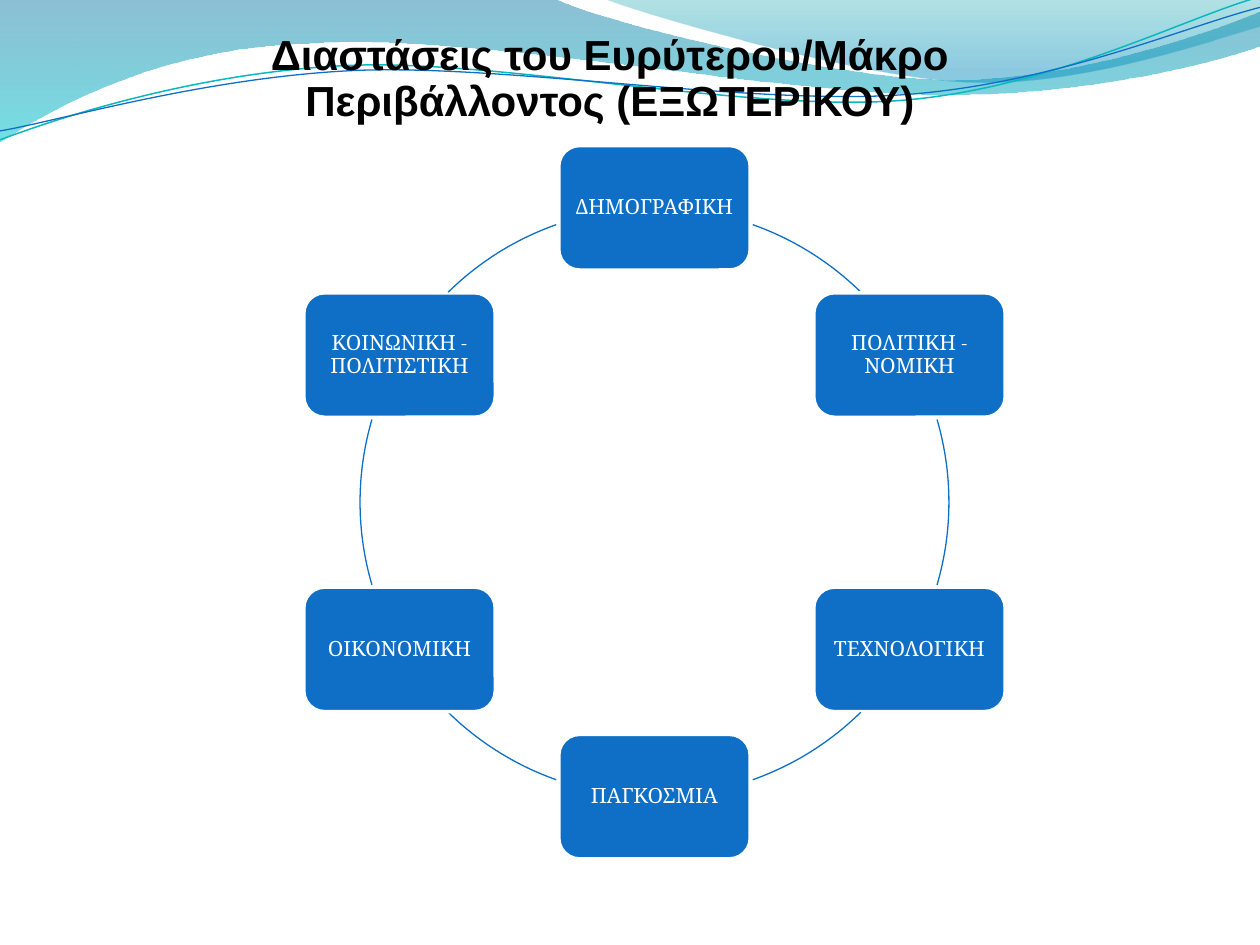
from dataclasses import dataclass
from math import cos, radians, sin

from lxml.etree import SubElement
from pptx import Presentation
from pptx.dml.color import RGBColor
from pptx.enum.shapes import MSO_SHAPE
from pptx.enum.text import MSO_ANCHOR, MSO_AUTO_SIZE, PP_ALIGN
from pptx.oxml.ns import qn
from pptx.util import Cm, Pt

BLUE = RGBColor(0x0F, 0x6F, 0xC6)
TEAL = RGBColor(0x0A, 0xB8, 0xBF)
DEEP_BLUE = RGBColor(0x00, 0x74, 0xA1)
CYAN = RGBColor(0x00, 0xC6, 0xCF)
SEA_GREEN = RGBColor(0x00, 0xA1, 0xA9)
SKY_BLUE = RGBColor(0x00, 0x8B, 0xBF)
BLACK = RGBColor(0x00, 0x00, 0x00)
WHITE = RGBColor(0xFF, 0xFF, 0xFF)

TITLE = "Διαστάσεις του Ευρύτερου/Μάκρο Περιβάλλοντος (ΕΞΩΤΕΡΙΚΟΥ)"
DIMENSIONS = [
    "ΔΗΜΟΓΡΑΦΙΚΗ",
    "ΠΟΛΙΤΙΚΗ - ΝΟΜΙΚΗ",
    "ΤΕΧΝΟΛΟΓΙΚΗ",
    "ΠΑΓΚΟΣΜΙΑ",
    "ΟΙΚΟΝΟΜΙΚΗ",
    "ΚΟΙΝΩΝΙΚΗ - ΠΟΛΙΤΙΣΤΙΚΗ",
]
NODE_WIDTH, NODE_HEIGHT = 3.86, 2.51
ARCS = [(-58, 12.5), (0, 16.3), (58, 12.5), (122, 12.5), (180, 16.3), (238, 12.5)]

BROAD_WAVE = [
    [(0, 0)],
    [(11.18, -0.03)],
    [(12.09, 0.43), (16.87, 1.6), (19.25, 1.6)],
    [(21.67, 1.6), (24.33, 0.66), (25.4, 0.23)],
    [(25.43, 0.91)],
    [(24.97, 1.12), (22.1, 1.93), (18.95, 1.91)],
    [(15.8, 1.91), (9.7, 0.71), (6.53, 0.86)],
    [(3.28, 0.91), (1.17, 2.11), (-0.03, 2.87)],
]
RIGHT_WAVE = [
    [(12.17, -0.03)],
    [(12.93, 0.28), (17.32, 1.57), (19.53, 1.65)],
    [(21.74, 1.75), (24.41, 0.81), (25.4, 0.53)],
    [(25.4, 0)],
]
TEAL_CURVE = [
    [(0, 2.82)],
    [(1.22, 2.36), (4.01, 1.45), (7.04, 1.32)],
    [(10.03, 1.19), (15.06, 2.26), (18.11, 2.03)],
    [(21.16, 1.8), (23.83, 0.38), (25.35, -0.05)],
]
BLUE_CURVE = [
    [(0, 2.64)],
    [(1.19, 2.44), (4.17, 1.55), (7.19, 1.42)],
    [(10.24, 1.3), (15.16, 2.13), (18.21, 1.91)],
    [(21.23, 1.7), (23.9, 0.53), (25.4, 0.15)],
]


@dataclass
class Box:
    """A region of the slide, in centimetres."""

    left: float
    top: float
    width: float
    height: float

    def lengths(self):
        """Return the four measures as slide lengths."""
        return Cm(self.left), Cm(self.top), Cm(self.width), Cm(self.height)


def write_text(shape, text, font, size, color, bold=False, spacing=0.9,
               anchor=MSO_ANCHOR.MIDDLE):
    """Write one centred paragraph into a shape."""
    frame = shape.text_frame
    frame.word_wrap = True
    frame.auto_size = MSO_AUTO_SIZE.NONE
    frame.vertical_anchor = anchor
    para = frame.paragraphs[0]
    para.alignment = PP_ALIGN.CENTER
    para.line_spacing = spacing
    span = para.add_run()
    span.text = text
    span.font.name = font
    span.font.size = Pt(size)
    span.font.bold = bold
    span.font.color.rgb = color


def draw_outline(page, box, segments, closed):
    """Draw an outline whose three-point segments are Bézier curves."""
    points = [
        (Cm(box.left + x), Cm(box.top + y)) for segment in segments for x, y in segment
    ]
    builder = page.shapes.build_freeform(*points[0])
    builder.add_line_segments(points[1:], close=closed)
    shape = builder.convert_to_shape()
    shape.shadow.inherit = False
    lines = iter(list(shape.element.iter(qn("a:lnTo"))))
    for segment in segments[1:]:
        steps = [next(lines) for point in segment]
        if len(steps) == 3:
            curve = steps[0].makeelement(qn("a:cubicBezTo"))
            steps[0].addprevious(curve)
            for step in steps:
                curve.append(step[0])
                step.getparent().remove(step)
    return shape


def draw_wave(page, box, segments, stops):
    """Draw a translucent wave with a downward gradient."""
    wave = draw_outline(page, box, segments, closed=True)
    wave.line.fill.background()
    wave.fill.gradient()
    wave.fill.gradient_angle = 270
    for stop, (position, color, opacity) in zip(wave.fill.gradient_stops, stops):
        stop.position = position
        stop.color.rgb = color
    for element, (position, color, opacity) in zip(wave.element.iter(qn("a:gs")), stops):
        SubElement(element[0], qn("a:alpha")).set("val", str(opacity * 1000))


def draw_curve(page, box, segments, color, width):
    """Draw a thin open curve."""
    curve = draw_outline(page, box, segments, closed=False)
    curve.fill.background()
    curve.line.color.rgb = color
    curve.line.width = Pt(width)


def add_header_waves(page, box):
    """Draw the waves and curves along the top of the slide."""
    draw_wave(page, box, BROAD_WAVE, [(0, DEEP_BLUE, 45), (1, CYAN, 55)])
    draw_wave(page, box, RIGHT_WAVE, [(0, SEA_GREEN, 30), (0.8, SKY_BLUE, 45)])
    draw_curve(page, box, TEAL_CURVE, TEAL, 0.85)
    draw_curve(page, box, BLUE_CURVE, BLUE, 0.75)


def add_title(page, box):
    """Place the title placeholder in front of the waves."""
    title = page.shapes.title
    title.element.getparent().append(title.element)
    title.left, title.top, title.width, title.height = box.lengths()
    write_text(title, TITLE, "Arial", 24, BLACK, bold=True, spacing=0.93,
               anchor=MSO_ANCHOR.TOP)


def add_node(page, box, text):
    """Draw one rounded box of the cycle."""
    node = page.shapes.add_shape(MSO_SHAPE.ROUNDED_RECTANGLE, *box.lengths())
    node.shadow.inherit = False
    node.fill.solid()
    node.fill.fore_color.rgb = BLUE
    node.line.color.rgb = WHITE
    node.line.width = Pt(2)
    frame = node.text_frame
    frame.margin_left = frame.margin_right = Cm(0.05)
    frame.margin_top = frame.margin_bottom = Cm(0.05)
    write_text(node, text, "Cambria", 12, WHITE)


def add_arc(page, box, middle, half_sweep):
    """Draw the part of the ring around a middle angle in degrees."""
    arc = page.shapes.add_shape(MSO_SHAPE.ARC, *box.lengths())
    arc.shadow.inherit = False
    arc.fill.background()
    arc.line.color.rgb = BLUE
    arc.line.width = Pt(0.75)
    for index, angle in enumerate((middle - half_sweep, middle + half_sweep)):
        arc.adjustments[index] = angle % 360 * 0.6


def add_cycle(page, box):
    """Spread the dimensions evenly on a ring that fills the box."""
    radius = box.width / 2
    for index, (text, arc) in enumerate(zip(DIMENSIONS, ARCS)):
        angle = radians(index * 360 / len(DIMENSIONS) - 90)
        left = box.left + radius + radius * cos(angle) - NODE_WIDTH / 2
        top = box.top + radius + radius * sin(angle) - NODE_HEIGHT / 2
        add_node(page, Box(left, top, NODE_WIDTH, NODE_HEIGHT), text)
        add_arc(page, box, *arc)


def main():
    """Build the slide and save the deck."""
    deck = Presentation()
    deck.slide_width, deck.slide_height = Cm(25.4), Cm(19.05)
    page = deck.slides.add_slide(deck.slide_layouts[5])
    add_header_waves(page, Box(0, 0, 25.4, 2.9))
    add_title(page, Box(3.1, 0.53, 18.39, 2.16))
    add_cycle(page, Box(7.26, 4.19, 11.87, 11.87))
    deck.save("out.pptx")


if __name__ == "__main__":
    main()
